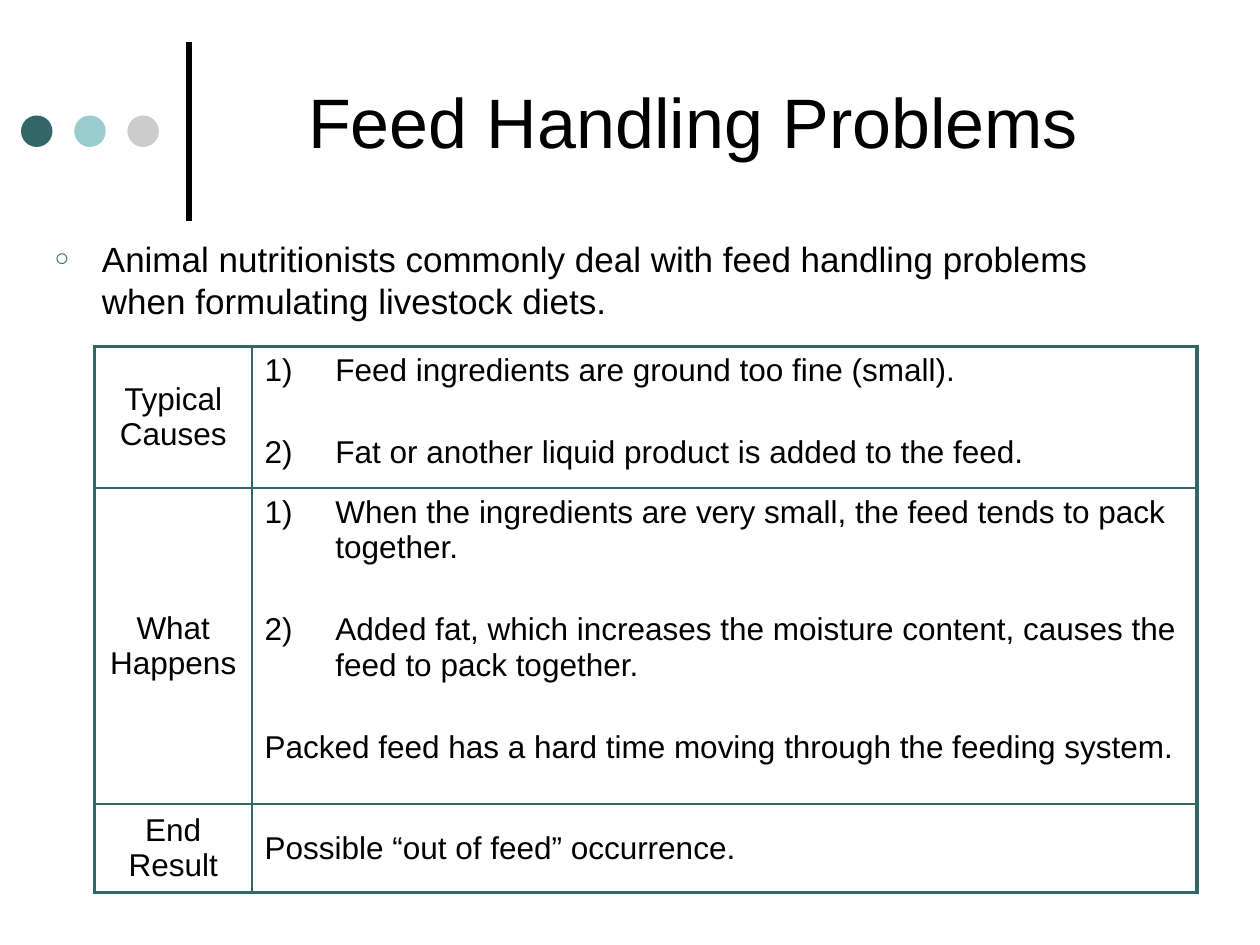
from lxml.etree import SubElement
from pptx import Presentation
from pptx.dml.color import RGBColor
from pptx.enum.shapes import MSO_CONNECTOR as Connector, MSO_SHAPE as Shape
from pptx.enum.text import MSO_ANCHOR as Anchor, MSO_AUTO_SIZE as AutoSize, PP_ALIGN as Align
from pptx.oxml.ns import qn
from pptx.util import Pt

TITLE = "Feed Handling Problems"
INTRO = ("Animal nutritionists commonly deal with feed handling problems "
         "when formulating livestock diets.")
ROWS = [
    ("Typical Causes", 81, Anchor.TOP,
     ["Feed ingredients are ground too fine (small).",
      "Fat or another liquid product is added to the feed."], []),
    ("What Happens", 180.5, Anchor.TOP,
     ["When the ingredients are very small, the feed tends to pack together.",
      "Added fat, which increases the moisture content, causes the feed to pack together."],
     ["Packed feed has a hard time moving through the feeding system."]),
    ("End Result", 50.5, Anchor.MIDDLE, [], ["Possible “out of feed” occurrence."]),
]
COLUMNS = [90, 540]
DOTS = ["336666", "99CCCC", "CCCCCC"]
TEAL, BLACK = "336666", "000000"
OUTER, INNER = 2.25, 1
ENTRY_GAP = 27


def color(value):
    return RGBColor.from_string(value)


def place(shape, left, top, width, height):
    shape.left, shape.top, shape.width, shape.height = map(Pt, (left, top, width, height))


def style(para, size, align=Align.LEFT):
    para.alignment = align
    para.font.name = "Arial"
    para.font.size = Pt(size)
    para.font.color.rgb = color(BLACK)


def hang(para, indent, *marks):
    properties = para._p.get_or_add_pPr()
    properties.set("marL", str(Pt(indent)))
    properties.set("indent", str(-Pt(indent)))
    for tag, attributes in marks:
        SubElement(properties, qn(tag), attributes)
    return properties


def set_borders(cell, widths):
    properties = cell._tc.get_or_add_tcPr()
    for side, width in zip("LRTB", widths):
        line = SubElement(properties, qn(f"a:ln{side}"), w=str(Pt(width)))
        fill = SubElement(line, qn("a:solidFill"))
        SubElement(fill, qn("a:srgbClr"), val=TEAL)


def fill_cell(cell, numbered, plain, anchor, align):
    cell.vertical_anchor = anchor
    frame = cell.text_frame
    entries = numbered + plain
    frame.text = "\n".join(entries)
    for index, para in enumerate(frame.paragraphs):
        para.space_before = Pt(ENTRY_GAP if index else 0)
        if index < len(numbered):
            hang(para, 40.5, ("a:buFont", {"typeface": "Arial"}),
                 ("a:buAutoNum", {"type": "arabicParenR"}))
        style(para, 18, align)


deck = Presentation()
deck.slide_width, deck.slide_height = Pt(720), Pt(540)
page = deck.slides.add_slide(deck.slide_layouts[1])

rule = page.shapes.add_connector(Connector.STRAIGHT, Pt(108), Pt(126), Pt(108), Pt(24))
rule.line.color.rgb = color(BLACK)
rule.line.width = Pt(3)
SubElement(rule._element.spPr, qn("a:effectLst"))

for index, shade in enumerate(DOTS):
    dot = page.shapes.add_shape(Shape.OVAL, Pt(12 + 30.4 * index), Pt(66), Pt(18), Pt(18))
    dot.fill.solid()
    dot.fill.fore_color.rgb = color(shade)
    dot.line.fill.background()
    dot.shadow.inherit = False

title, body = page.placeholders
place(title, 120, 30, 552, 78)
title.text_frame.text = TITLE
title.text_frame.vertical_anchor = Anchor.MIDDLE
style(title.text_frame.paragraphs[0], 40, Align.CENTER)

place(body, 24, 132, 624, 330)
body.text_frame.text = INTRO
body.text_frame.auto_size = AutoSize.NONE
intro = body.text_frame.paragraphs[0]
intro.space_before = Pt(4)
bullet = hang(intro, 27, ("a:buClr", {}), ("a:buSzPct", {"val": "70000"}),
              ("a:buFont", {"typeface": "Arial"}), ("a:buChar", {"char": "○"}))
SubElement(bullet.find(qn("a:buClr")), qn("a:srgbClr"), val=TEAL)
style(intro, 20)

heights = [row[1] for row in ROWS]
table = page.shapes.add_table(len(ROWS), len(COLUMNS), Pt(54), Pt(198),
                              Pt(sum(COLUMNS)), Pt(sum(heights))).table
table.first_row = table.horz_banding = False
for column, width in zip(table.columns, COLUMNS):
    column.width = Pt(width)
for index, (label, height, anchor, numbered, plain) in enumerate(ROWS):
    table.rows[index].height = Pt(height)
    name, details = table.rows[index].cells
    fill_cell(name, [], [label], Anchor.MIDDLE, Align.CENTER)
    fill_cell(details, numbered, plain, anchor, Align.LEFT)
    top = OUTER if index == 0 else INNER
    bottom = OUTER if index == len(ROWS) - 1 else INNER
    set_borders(name, (OUTER, INNER, top, bottom))
    set_borders(details, (INNER, OUTER, top, bottom))
    for cell in (name, details):
        cell.fill.background()

deck.save("out.pptx")
